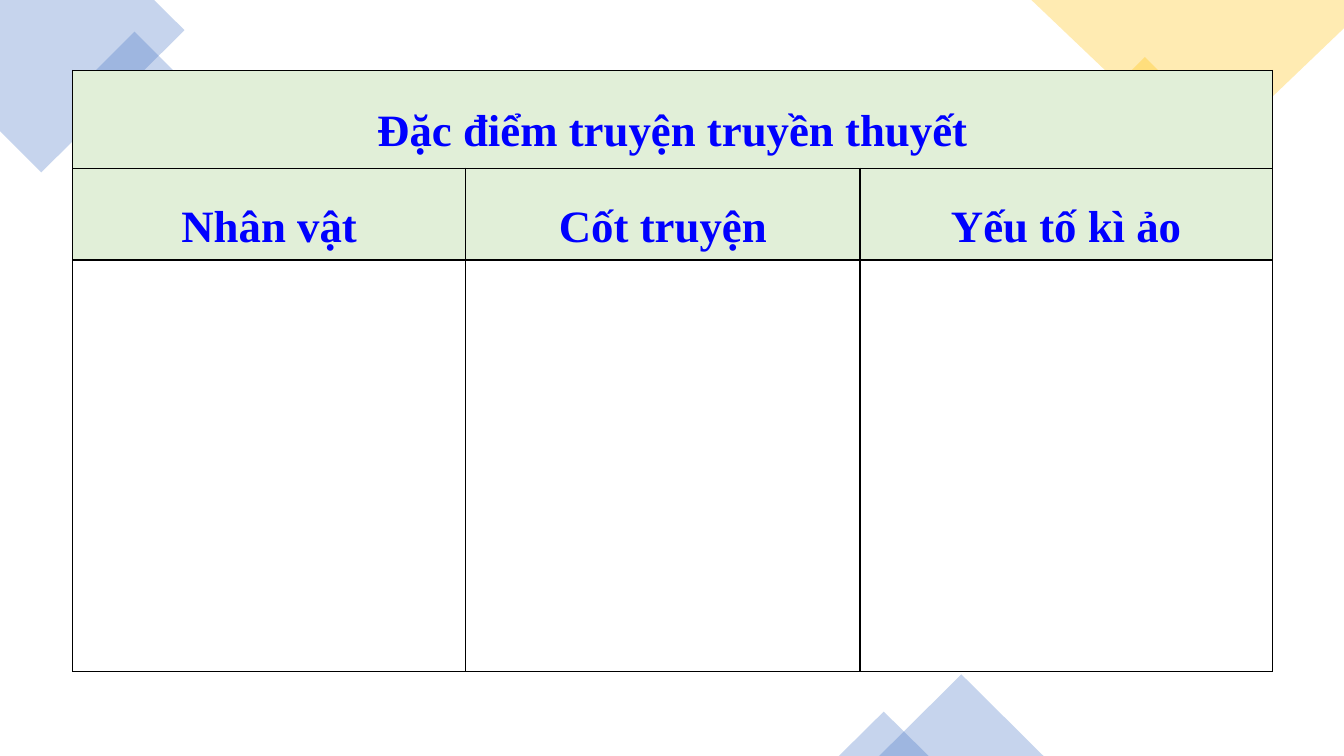
from dataclasses import dataclass

from lxml import etree
from pptx import Presentation
from pptx.dml.color import RGBColor
from pptx.enum.shapes import MSO_SHAPE
from pptx.enum.text import MSO_ANCHOR, PP_ALIGN
from pptx.oxml import parse_xml
from pptx.oxml.ns import nsdecls, qn
from pptx.util import Inches, Pt

RECTANGLE = MSO_SHAPE.RECTANGLE
TRIANGLE = MSO_SHAPE.ISOSCELES_TRIANGLE
TOP, MIDDLE = MSO_ANCHOR.TOP, MSO_ANCHOR.MIDDLE
CENTER = PP_ALIGN.CENTER

COLORS = {
    "blue": "4472C4",
    "gold": "FFC000",
    "header": "E1EFD8",
    "text": "0000FF",
    "border": "000000",
}
OPACITY = 30
HEADING_FONT = {"name": "Times New Roman", "size": Pt(32), "bold": True}
HEADING_PARAGRAPH = {"alignment": CENTER, "line_spacing": 1.5}
TITLE_CELL = {
    "vertical_anchor": TOP,
    "margin_left": Inches(0.23),
    "margin_right": Inches(0.23),
    "margin_top": Inches(0.11),
    "margin_bottom": Inches(0.11),
}
COLUMN_CELL = {
    "vertical_anchor": MIDDLE,
    "margin_left": Inches(0.17),
    "margin_right": Inches(0.17),
    "margin_top": Inches(0.02),
    "margin_bottom": Inches(0),
}


@dataclass
class Ornament:
    preset: MSO_SHAPE
    left: float
    top: float
    width: float
    height: float
    color: str
    rotation: float = 0


@dataclass
class CornerPatch:
    points: list[tuple[float, float]]
    color: str


@dataclass
class Heading:
    row: int
    column: int
    text: str
    cell_format: dict


CORNER_PATCHES = [
    CornerPatch([(1.53, 0), (0, 0), (0, 1.3), (0.41, 1.71), (1.83, 0.3)], "blue"),
    CornerPatch([(13.33, 0), (10.23, 0), (11.93, 1.62), (13.33, 0.28)], "gold"),
]
ORNAMENTS = [
    Ornament(RECTANGLE, 0.98, 0.46, 0.71, 0.71, "blue", 315),
    Ornament(RECTANGLE, 10.98, 0.72, 0.75, 0.75, "gold", 315),
    Ornament(TRIANGLE, 8.72, 6.69, 1.63, 0.81, "blue"),
    Ornament(TRIANGLE, 8.32, 7.06, 0.89, 0.44, "blue"),
]
HEADINGS = [
    Heading(0, 0, "Đặc điểm truyện truyền thuyết", TITLE_CELL),
    Heading(1, 0, "Nhân vật", COLUMN_CELL),
    Heading(1, 1, "Cốt truyện", COLUMN_CELL),
    Heading(1, 2, "Yếu tố kì ảo", COLUMN_CELL),
]
COLUMN_WIDTHS = [3.9, 3.91, 4.09]
ROW_HEIGHTS = [0.97, 0.91, 4.08]


def apply_format(target, values: dict) -> None:
    for attribute, value in values.items():
        setattr(target, attribute, value)


def tint(shape, color: str) -> None:
    shape.shadow.inherit = False
    shape.line.fill.background()
    shape.fill.solid()
    shape.fill.fore_color.rgb = RGBColor.from_string(COLORS[color])
    fill_color = shape._element.spPr.find(qn("a:solidFill"))[0]
    etree.SubElement(fill_color, qn("a:alpha"), val=str(OPACITY * 1000))


def draw_corner_patch(slide, patch: CornerPatch) -> None:
    start, *others = [(Inches(x), Inches(y)) for x, y in patch.points]
    outline = slide.shapes.build_freeform(*start)
    outline.add_line_segments(others, close=True)
    tint(outline.convert_to_shape(), patch.color)


def draw_ornament(slide, ornament: Ornament) -> None:
    shape = slide.shapes.add_shape(
        ornament.preset,
        Inches(ornament.left),
        Inches(ornament.top),
        Inches(ornament.width),
        Inches(ornament.height),
    )
    shape.rotation = ornament.rotation
    tint(shape, ornament.color)


def add_borders(cell) -> None:
    properties = cell._tc.get_or_add_tcPr()
    for side in ("lnL", "lnR", "lnT", "lnB"):
        properties.append(parse_xml(
            f'<a:{side} {nsdecls("a")} w="{Pt(1)}"><a:solidFill>'
            f'<a:srgbClr val="{COLORS["border"]}"/></a:solidFill></a:{side}>'
        ))


def write_heading(table, heading: Heading) -> None:
    cell = table.cell(heading.row, heading.column)
    apply_format(cell, heading.cell_format)
    paragraph = cell.text_frame.paragraphs[0]
    apply_format(paragraph, HEADING_PARAGRAPH)
    run = paragraph.add_run()
    run.text = heading.text
    apply_format(run.font, HEADING_FONT)
    run.font.color.rgb = RGBColor.from_string(COLORS["text"])


def draw_features_table(slide) -> None:
    table = slide.shapes.add_table(
        len(ROW_HEIGHTS), len(COLUMN_WIDTHS), Inches(0.72), Inches(0.7),
        Inches(sum(COLUMN_WIDTHS)), Inches(sum(ROW_HEIGHTS)),
    ).table
    apply_format(table, {"first_row": False, "horz_banding": False})
    for column, width in zip(table.columns, COLUMN_WIDTHS):
        column.width = Inches(width)
    for index, (row, height) in enumerate(zip(table.rows, ROW_HEIGHTS)):
        row.height = Inches(height)
        for cell in row.cells:
            add_borders(cell)
            if index < 2:
                cell.fill.solid()
                cell.fill.fore_color.rgb = RGBColor.from_string(COLORS["header"])
            else:
                cell.fill.background()
    table.cell(0, 0).merge(table.cell(0, 2))
    for heading in HEADINGS:
        write_heading(table, heading)


def main() -> None:
    presentation = Presentation()
    presentation.slide_width = Inches(13.33)
    presentation.slide_height = Inches(7.5)
    slide = presentation.slides.add_slide(presentation.slide_layouts[6])

    # Corner and edge decoration
    for patch in CORNER_PATCHES:
        draw_corner_patch(slide, patch)
    for ornament in ORNAMENTS:
        draw_ornament(slide, ornament)

    # Table of legend features
    draw_features_table(slide)

    presentation.save("out.pptx")


if __name__ == "__main__":
    main()
